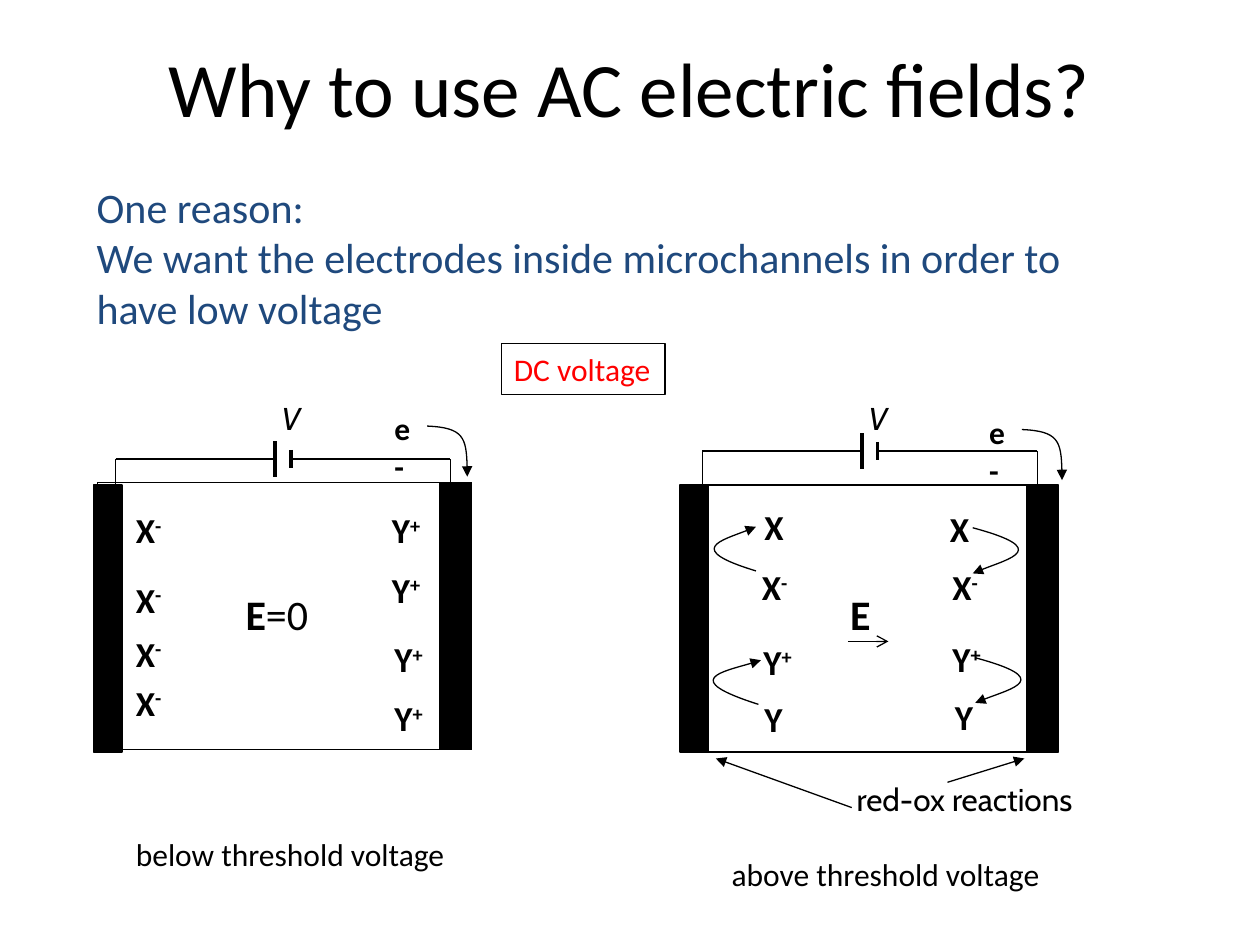
"""Build a slide comparing DC cells below and above the threshold voltage."""
from dataclasses import dataclass

import pptx
import pptx.dml.color
import pptx.enum.shapes
import pptx.enum.text
import pptx.oxml
import pptx.oxml.ns
import pptx.util
from pptx.util import Cm

BLACK, NAVY, RED = "000000", "1F497D", "FF0000"
Point = tuple[float, float]


@dataclass
class Cell:
    x: float
    y: float
    wire_y: float
    electron: Point


@dataclass
class Ion:
    name: str
    charge: str
    x: float
    y: float


@dataclass
class Caption:
    text: str
    x: float
    y: float
    w: float
    font: str = "Calibri"


CELLS = [Cell(13.79, 9.78, 9.09, (19.69, 8.2)), Cell(1.96, 9.73, 9.25, (7.7, 8.13))]
IONS = [
    *[Ion("X", "-", 2.49, y) for y in (10.13, 11.53, 12.62, 13.61)],
    Ion("Y", "+", 7.65, 10.13), Ion("Y", "+", 7.65, 11.33),
    Ion("Y", "+", 7.7, 12.73), Ion("Y", "+", 7.7, 13.92),
    Ion("X", "", 15.16, 10.06), Ion("X", "-", 15.11, 11.28),
    Ion("Y", "+", 15.14, 12.78), Ion("Y", "", 15.16, 13.94),
    Ion("X", "", 18.9, 10.11), Ion("X", "-", 18.95, 11.28),
    Ion("Y", "+", 18.95, 12.73), Ion("Y", "", 19, 13.89),
]
REACTIONS = [
    [(19.61, 10.64), (21.21, 11.07), (20.19, 11.3), (19.61, 11.56)],
    [(19.66, 13.26), (21.26, 13.69), (20.24, 13.92), (19.66, 14.17)],
    [(15.24, 11.51), (13.79, 11.07), (14.71, 10.85), (15.24, 10.62)],
    [(15.29, 14.2), (13.69, 13.69), (14.73, 13.51), (15.34, 13.31)],
]
CAPTIONS = [
    Caption("below threshold voltage", 2.49, 16.71, 6.81),
    Caption("above threshold voltage", 14.5, 17.12, 6.78),
    Caption("red-ox reactions", 17.02, 15.6, 5.08, "Cabin"),
]


def rgb(color: str) -> pptx.dml.color.RGBColor:
    return pptx.dml.color.RGBColor.from_string(color)


def set_font(font, size: float, color: str = BLACK, name: str = "Calibri") -> None:
    font.size, font.name = pptx.util.Pt(size), name
    font.color.rgb = rgb(color)


def set_line(sp, width: float = 0.75, arrow: str = "") -> None:
    sp.line.color.rgb = rgb(BLACK)
    sp.line.width = pptx.util.Pt(width)
    if arrow:
        end = pptx.oxml.parse_xml(f'<a:tailEnd {pptx.oxml.ns.nsdecls("a")} type="{arrow}"/>')
        sp.line._get_or_add_ln().append(end)


def add_text(s, text: str, x: float, y: float, w: float, h: float, size: float,
             color: str = BLACK, font: str = "Calibri", wrap: bool = True):
    sp = s.shapes.add_textbox(Cm(x), Cm(y), Cm(w), Cm(h))
    tf = sp.text_frame
    tf.word_wrap = wrap
    tf.text = text
    for p in tf.paragraphs:
        set_font(p.font, size, color, font)
    return sp


def add_ion(s, ion: Ion) -> None:
    p = add_text(s, ion.name, ion.x, ion.y, 1.65, 0.81, 20).text_frame.paragraphs[0]
    p.font.bold = True
    if ion.charge:
        r = p.add_run()
        r.text = ion.charge
        r._r.get_or_add_rPr().set("baseline", "30000")


def add_rect(s, x: float, y: float, w: float, h: float, fill: str = ""):
    sp = s.shapes.add_shape(pptx.enum.shapes.MSO_SHAPE.RECTANGLE, Cm(x), Cm(y), Cm(w), Cm(h))
    sp.shadow.inherit = False
    if fill:
        sp.fill.solid()
        sp.fill.fore_color.rgb = rgb(fill)
    else:
        sp.fill.background()
    set_line(sp)
    return sp


def add_line(s, start: Point, end: Point, width: float = 0.75, arrow: str = "") -> None:
    sp = s.shapes.add_connector(pptx.enum.shapes.MSO_CONNECTOR.STRAIGHT,
                                *[Cm(v) for v in (*start, *end)])
    set_line(sp, width, arrow)
    sp._element.spPr.append(pptx.oxml.parse_xml(f'<a:effectLst {pptx.oxml.ns.nsdecls("a")}/>'))


def add_curve(s, points: list[Point]) -> None:
    start, *rest = [(Cm(x), Cm(y)) for x, y in points]
    builder = s.shapes.build_freeform(*start)
    builder.add_line_segments(rest, close=False)
    sp = builder.convert_to_shape()
    qn = pptx.oxml.ns.qn
    segments = list(sp._element.iter(qn("a:lnTo")))
    bezier = pptx.oxml.parse_xml(f'<a:cubicBezTo {pptx.oxml.ns.nsdecls("a")}/>')
    segments[0].addprevious(bezier)
    for segment in segments:
        bezier.append(segment.find(qn("a:pt")))
        segment.getparent().remove(segment)
    sp.fill.background()
    sp.shadow.inherit = False
    set_line(sp, arrow="triangle")


def add_cell(s, cell: Cell) -> None:
    add_rect(s, cell.x, cell.y, 7.54, 5.38)
    add_rect(s, cell.x - 0.08, 9.78, 0.58, 5.38, BLACK)
    add_rect(s, cell.x + 6.9, cell.y, 0.64, 5.38, BLACK)
    left, y = cell.x + 0.37, cell.wire_y
    plates = [(left + 3.22, 0.36), (left + 3.53, 0.18)]
    right = left + 6.75
    for wire_end, plate in ((left, plates[0][0]), (right, plates[1][0])):
        add_line(s, (wire_end, y + 0.69), (wire_end, y))
        add_line(s, (wire_end, y), (plate, y))
    for x, half in plates:
        add_line(s, (x, y - half), (x, y + half), 2.25)
    sp = add_text(s, "V", left + 3.1, 7.92, 1.63, 0.74, 18, font="Cabin")
    sp.text_frame.paragraphs[0].font.italic = True
    ex, ey = cell.electron
    sp = add_text(s, "e-", ex, ey, 0.86, 0.74, 18)
    sp.text_frame.paragraphs[0].font.bold = True
    path = [(0, 0), (0.74, 0.03), (0.81, 0.28), (0.81, 1.02)]
    add_curve(s, [(ex + 0.91 + dx, ey + 0.46 + dy) for dx, dy in path])


def add_field(s, x: float, w: float, value: str = "") -> None:
    p = add_text(s, "E", x, 11.73, w, 1.27, 24, wrap=False).text_frame.paragraphs[0]
    p.runs[0].font.bold = True
    if value:
        p.add_run().text = value


def main() -> None:
    prs = pptx.Presentation()
    prs.slide_width, prs.slide_height = Cm(25.4), Cm(19.05)
    s = prs.slides.add_slide(prs.slide_layouts[5])
    title = s.shapes.title
    title.left, title.top, title.width, title.height = Cm(1.27), Cm(0.15), Cm(22.86), Cm(3.18)
    title.text_frame.text = "Why to use AC electric fields?"
    title.text_frame.vertical_anchor = pptx.enum.text.MSO_ANCHOR.MIDDLE
    p = title.text_frame.paragraphs[0]
    p.alignment = pptx.enum.text.PP_ALIGN.CENTER
    set_font(p.font, 44)
    add_text(s, "One reason:\nWe want the electrodes inside microchannels in order to have low voltage",
             1.7, 3.53, 21.69, 3.33, 24, NAVY)
    for cell in CELLS:
        add_cell(s, cell)
    for ion in IONS:
        add_ion(s, ion)
    for points in REACTIONS:
        add_curve(s, points)
    for c in CAPTIONS:
        add_text(s, c.text, c.x, c.y, c.w, 1.02, 18, font=c.font, wrap=False)
    add_line(s, (19.1, 15.77), (20.65, 15.29), arrow="triangle")
    add_line(s, (17.17, 16.28), (14.43, 15.29), arrow="triangle")
    add_field(s, 4.7, 1.8, "=0")
    add_field(s, 16.89, 0.94)
    add_line(s, (17.09, 12.93), (17.91, 12.93), arrow="arrow")
    tf = add_rect(s, 10.11, 6.93, 3.3, 1.02).text_frame
    tf.word_wrap = False
    tf.text = "DC voltage"
    tf.paragraphs[0].alignment = pptx.enum.text.PP_ALIGN.LEFT
    set_font(tf.paragraphs[0].font, 18, RED)
    prs.save("out.pptx")


if __name__ == "__main__":
    main()
